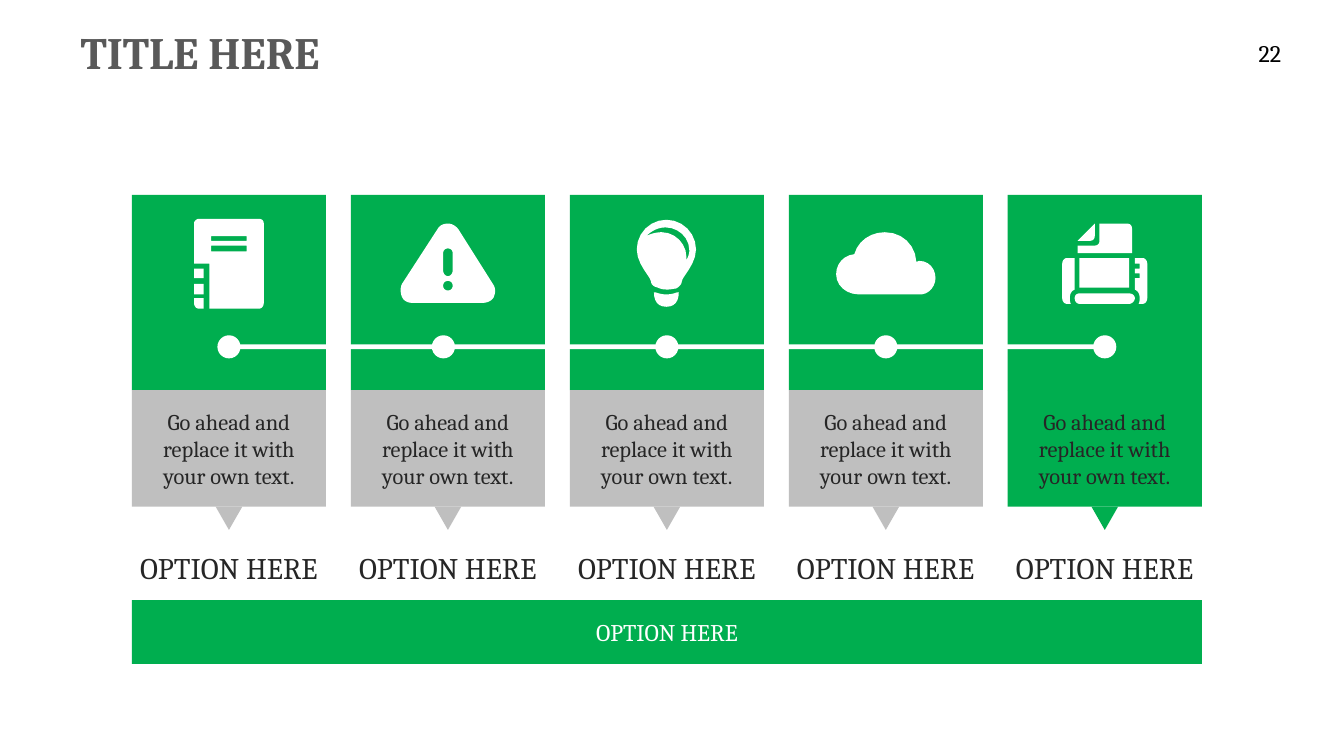
import dataclasses

import pptx
import pptx.dml.color
import pptx.enum.shapes
import pptx.enum.text
import pptx.util

Pt = pptx.util.Pt
SHAPE = pptx.enum.shapes.MSO_SHAPE
ALIGN = pptx.enum.text.PP_ALIGN
ANCHOR = pptx.enum.text.MSO_ANCHOR


@dataclasses.dataclass(frozen=True)
class Theme:
    font: str = "Cambria"
    green: str = "00AE4F"
    gray: str = "BFBFBF"
    white: str = "FFFFFF"
    black: str = "000000"
    ink: str = "262626"
    title_ink: str = "595959"
    title_size: float = 33.8
    label_size: float = 22.5
    bar_size: float = 18
    body_size: float = 16.9


@dataclasses.dataclass(frozen=True)
class Box:
    left: float
    top: float
    width: float
    height: float

    @property
    def center(self):
        return self.left + self.width / 2

    def lengths(self):
        return Pt(self.left), Pt(self.top), Pt(self.width), Pt(self.height)


@dataclasses.dataclass(frozen=True)
class Icon:
    width: float
    height: float
    outlines: list
    blocks: tuple = ()


THEME = Theme()
ICON_UNIT = 0.72
CURVE_STEPS = 6

NOTEBOOK = Icon(73, 94, [
    [[(5, 0), (68, 0), (71, 0, 73, 2, 73, 5), (73, 88), (73, 91, 71, 94, 68, 94),
      (16, 94), (16, 47), (0, 47), (0, 5), (0, 2, 3, 0, 5, 0)],
     [(18, 34), (55, 34), (55, 28), (18, 28)],
     [(18, 23), (55, 23), (55, 18), (18, 18)]],
    [[(0, 83), (10, 83), (10, 94), (5, 94), (2, 94, 0, 91, 0, 88)]],
], (Box(0, 52, 10, 10), Box(0, 68, 10, 11)))

WARNING = Icon(100, 84, [
    [[(39, 6), (41, 2, 45, 0, 50, 0), (54, 0, 58, 2, 61, 6), (97, 63),
      (100, 67, 100, 72, 98, 77), (96, 81, 91, 83, 86, 83), (13, 83),
      (8, 83, 4, 81, 2, 77), (0, 72, 0, 67, 2, 63)],
     [(50, 70), (53, 70, 55, 68, 55, 65), (55, 62, 53, 60, 50, 60),
      (47, 60, 45, 62, 45, 65), (45, 68, 47, 70, 50, 70)],
     [(45, 49), (45, 52, 47, 55, 50, 55), (53, 55, 55, 52, 55, 49), (55, 31),
      (55, 28, 53, 26, 50, 26), (47, 26, 45, 28, 45, 31)]],
])

BULB = Icon(63, 92, [
    [[(20, 76), (23, 77, 26, 78, 30, 78), (32, 78), (36, 78, 39, 77, 42, 76),
      (44, 76), (44, 85, 40, 91, 31, 91), (22, 91, 18, 85, 18, 76)]],
    [[(31, 0), (48, 0, 62, 14, 62, 31), (62, 47, 47, 60, 47, 65),
      (47, 67, 45, 70, 41, 72), (39, 72, 36, 73, 33, 73), (31, 73),
      (29, 73, 26, 73, 22, 71), (17, 70, 15, 67, 15, 65),
      (15, 60, 0, 47, 0, 31), (0, 14, 14, 0, 31, 0)],
     [(26, 13), (40, 13, 52, 25, 52, 39), (52, 40, 52, 41, 52, 42),
      (54, 39, 55, 35, 55, 32), (55, 18, 43, 8, 30, 8),
      (22, 8, 15, 12, 10, 17), (14, 15, 20, 13, 26, 13)]],
])

CLOUD = Icon(104, 66, [
    [[(19, 23), (23, 9, 36, 0, 51, 0), (69, 0, 83, 13, 84, 31),
      (85, 31, 86, 30, 87, 30), (97, 30, 104, 38, 104, 48),
      (104, 56, 98, 64, 90, 65), (23, 65), (11, 65, 0, 56, 0, 44),
      (0, 33, 8, 24, 19, 23)]],
])

PRINTER = Icon(89, 84, [
    [[(5, 36), (13, 36), (13, 69), (9, 71, 8, 74, 8, 78), (8, 80, 8, 82, 9, 84),
      (5, 84), (2, 84, 0, 81, 0, 78), (0, 42), (0, 39, 2, 36, 5, 36)]],
    [[(18, 73), (70, 73), (73, 73, 76, 75, 76, 78), (76, 81, 73, 84, 70, 84),
      (18, 84), (15, 84, 13, 81, 13, 78), (13, 75, 15, 73, 18, 73)]],
    [[(76, 69), (76, 57), (81, 57), (81, 52), (76, 52), (76, 47), (81, 47),
      (81, 42), (76, 42), (76, 36), (84, 36), (87, 36, 89, 39, 89, 42), (89, 78),
      (89, 81, 87, 84, 84, 84), (80, 84), (81, 82, 81, 80, 81, 78),
      (81, 74, 80, 71, 76, 69)]],
    [[(29, 18), (16, 18), (34, 0), (34, 13), (34, 16, 32, 18, 29, 18)]],
    [[(16, 23), (34, 23), (37, 23, 39, 21, 39, 18), (39, 0), (68, 0),
      (71, 0, 73, 2, 73, 5), (73, 31), (16, 31)]],
], (Box(18, 36, 52, 31),))


def paint(shape, color):
    shape.shadow.inherit = False
    shape.fill.solid()
    shape.fill.fore_color.rgb = pptx.dml.color.RGBColor.from_string(color)
    shape.line.fill.background()


def add_block(shapes, box, color, kind=SHAPE.RECTANGLE):
    shape = shapes.add_shape(kind, *box.lengths())
    paint(shape, color)
    return shape


def write(shape, text, size, color, align=ALIGN.CENTER, anchor=ANCHOR.MIDDLE, bold=False):
    frame = shape.text_frame
    frame.word_wrap = True
    frame.vertical_anchor = anchor
    frame.text = text
    paragraph = frame.paragraphs[0]
    paragraph.alignment = align
    font = paragraph.runs[0].font
    font.name, font.size, font.bold = THEME.font, Pt(size), bold
    font.color.rgb = pptx.dml.color.RGBColor.from_string(color)


def add_label(slide, box, text, size, color, align=ALIGN.CENTER, bold=False):
    label = slide.shapes.add_textbox(*box.lengths())
    write(label, text, size, color, align, ANCHOR.TOP, bold)


def flatten(contour):
    points = [contour[0]]
    for segment in contour[1:]:
        if len(segment) == 2:
            points.append(segment)
            continue
        start, first, second, end = points[-1], segment[:2], segment[2:4], segment[4:]
        for step in range(1, CURVE_STEPS + 1):
            t = step / CURVE_STEPS
            u = 1 - t
            points.append(tuple(
                u**3 * a + 3 * u * u * t * b + 3 * u * t * t * c + t**3 * d
                for a, b, c, d in zip(start, first, second, end)))
    return points


def add_icon(slide, box, icon):
    shapes = slide.shapes.add_group_shape().shapes
    for contours in icon.outlines:
        builder = None
        for contour in contours:
            points = [(Pt(box.left + x * ICON_UNIT), Pt(box.top + y * ICON_UNIT))
                      for x, y in flatten(contour)]
            if builder is None:
                builder = shapes.build_freeform(*points[0])
            else:
                builder.move_to(*points[0])
            builder.add_line_segments(points[1:], close=True)
        paint(builder.convert_to_shape(), THEME.white)
    for block in icon.blocks:
        add_block(shapes, Box(box.left + block.left * ICON_UNIT, box.top + block.top * ICON_UNIT,
                              block.width * ICON_UNIT, block.height * ICON_UNIT), THEME.white)


def add_option(slide, box, icon, color):
    tile_height, text_height = 147, 87.8
    text_top = box.top + tile_height
    pointer_top = text_top + text_height
    add_block(slide.shapes, Box(box.left, box.top, box.width, tile_height), THEME.green)
    body = add_block(slide.shapes, Box(box.left, text_top, box.width, text_height), color)
    write(body, "Go ahead and replace it with your own text.", THEME.body_size, THEME.ink)
    width, height = icon.width * ICON_UNIT, icon.height * ICON_UNIT
    add_icon(slide, Box(box.center - width / 2, box.top + 51.8 - height / 2, width, height), icon)
    pointer = add_block(slide.shapes, Box(box.center - 10, pointer_top, 20, 17.5),
                        color, SHAPE.ISOSCELES_TRIANGLE)
    pointer.rotation = 180
    add_label(slide, Box(box.center - 86.4, box.top + 263.5, 172.8, 34.6),
              "OPTION HERE", THEME.label_size, THEME.ink)


def add_timeline(slide, box, pitch):
    add_block(slide.shapes, Box(box.left, box.top + 6.8, box.width, 3.6), THEME.white)
    for index, shift in enumerate((0, -3.4, 0, 0, 0)):
        node_left = box.left - 3.2 + index * pitch + shift
        add_block(slide.shapes, Box(node_left, box.top, box.height, box.height),
                  THEME.white, SHAPE.OVAL)


def add_options(slide, box):
    icons = (NOTEBOOK, WARNING, BULB, CLOUD, PRINTER)
    card_width = 146.2
    pitch = (box.width - card_width) / (len(icons) - 1)
    for index, icon in enumerate(icons):
        color = THEME.green if icon is PRINTER else THEME.gray
        add_option(slide, Box(box.left + index * pitch, box.top, card_width, box.height), icon, color)
    add_timeline(slide, Box(box.left + 67.6, box.top + 105.7, 4 * pitch, 17.4), pitch)
    bar = add_block(slide.shapes, Box(box.left, box.top + 305.2, box.width, 48), THEME.green)
    write(bar, "OPTION HERE", THEME.bar_size, THEME.white)


def add_header(slide, box):
    add_label(slide, Box(box.left, box.top, 363, 48), "TITLE HERE", THEME.title_size,
              THEME.title_ink, ALIGN.LEFT, True)
    add_label(slide, Box(box.left + box.width - 46, box.top + 10.8, 46, 39), "22",
              THEME.bar_size, THEME.black, ALIGN.LEFT)


def main():
    presentation = pptx.Presentation()
    presentation.slide_width, presentation.slide_height = Pt(1012.5), Pt(569.5)
    slide = presentation.slides.add_slide(presentation.slide_layouts[6])
    add_options(slide, Box(99.4, 146.9, 806, 353.2))
    add_header(slide, Box(53.6, 15.1, 933.5, 50))
    presentation.save("out.pptx")


if __name__ == "__main__":
    main()
